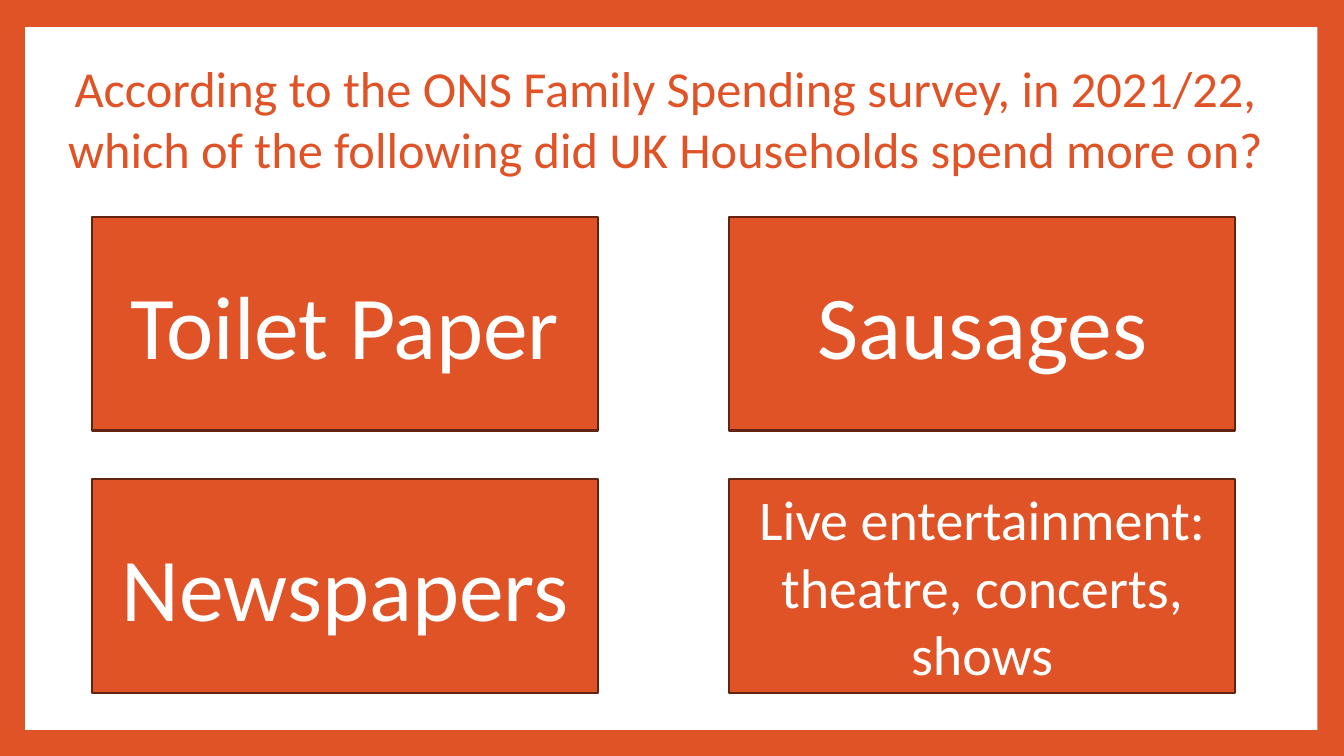
"""Build a quiz slide: one question above a two-by-two grid of answer cards."""
from dataclasses import dataclass

from pptx import Presentation
from pptx.dml.color import RGBColor
from pptx.enum.shapes import MSO_SHAPE as Preset
from pptx.enum.text import MSO_ANCHOR as Anchor, PP_ALIGN as Align
from pptx.shapes.autoshape import Shape
from pptx.slide import Slide
from pptx.text.text import TextFrame
from pptx.util import Pt


@dataclass(frozen=True)
class Theme:
    font: str = "Calibri"
    orange: RGBColor = RGBColor(0xDF, 0x53, 0x27)
    brown: RGBColor = RGBColor(0x62, 0x24, 0x11)
    white: RGBColor = RGBColor(0xFF, 0xFF, 0xFF)
    question_size: float = 36
    answer_size: float = 64
    long_answer_size: float = 40


@dataclass(frozen=True)
class Box:
    left: float
    top: float
    width: float
    height: float

    def lengths(self) -> tuple[Pt, Pt, Pt, Pt]:
        return Pt(self.left), Pt(self.top), Pt(self.width), Pt(self.height)


@dataclass(frozen=True)
class Answer:
    text: str
    size: float


THEME = Theme()
PANEL = Box(18, 19.4, 923, 502)
QUESTION_BOX = Box(33.1, 37.4, 885, 94.3)
FIRST_CARD = Box(66, 154.8, 361, 152.8)
COLUMN_STEP, ROW_STEP = 455, 187.2
COLUMNS = 2
QUESTION = (
    "According to the ONS Family Spending survey, in 2021/22, "
    "which of the following did UK Households spend more on?"
)
ANSWERS = [
    Answer("Toilet Paper", THEME.answer_size),
    Answer("Sausages", THEME.answer_size),
    Answer("Newspapers", THEME.answer_size),
    Answer("Live entertainment: theatre, concerts, shows", THEME.long_answer_size),
]


def add_rectangle(page: Slide, box: Box, fill: RGBColor) -> Shape:
    shape = page.shapes.add_shape(Preset.RECTANGLE, *box.lengths())
    shape.shadow.inherit = False
    shape.fill.solid()
    shape.fill.fore_color.rgb = fill
    shape.line.fill.background()
    return shape


def write_centred(frame: TextFrame, text: str, size: float, color: RGBColor) -> None:
    frame.word_wrap = True
    para = frame.paragraphs[0]
    para.text = text
    para.alignment = Align.CENTER
    para.font.name = THEME.font
    para.font.size = Pt(size)
    para.font.color.rgb = color


def add_question(page: Slide) -> None:
    text_box = page.shapes.add_textbox(*QUESTION_BOX.lengths())
    write_centred(text_box.text_frame, QUESTION, THEME.question_size, THEME.orange)


def add_answer(page: Slide, index: int, answer: Answer) -> None:
    row, column = divmod(index, COLUMNS)
    box = Box(
        FIRST_CARD.left + column * COLUMN_STEP,
        FIRST_CARD.top + row * ROW_STEP,
        FIRST_CARD.width,
        FIRST_CARD.height,
    )
    card = add_rectangle(page, box, THEME.orange)
    card.line.color.rgb = THEME.brown
    card.line.width = Pt(1.5)
    card.text_frame.vertical_anchor = Anchor.MIDDLE
    write_centred(card.text_frame, answer.text, answer.size, THEME.white)


def main() -> None:
    deck = Presentation()
    deck.slide_width, deck.slide_height = Pt(960), Pt(540)
    page = deck.slides.add_slide(deck.slide_layouts[6])
    page.background.fill.solid()
    page.background.fill.fore_color.rgb = THEME.orange
    add_rectangle(page, PANEL, THEME.white)
    add_question(page)
    for index, answer in enumerate(ANSWERS):
        add_answer(page, index, answer)
    deck.save("out.pptx")


if __name__ == "__main__":
    main()
